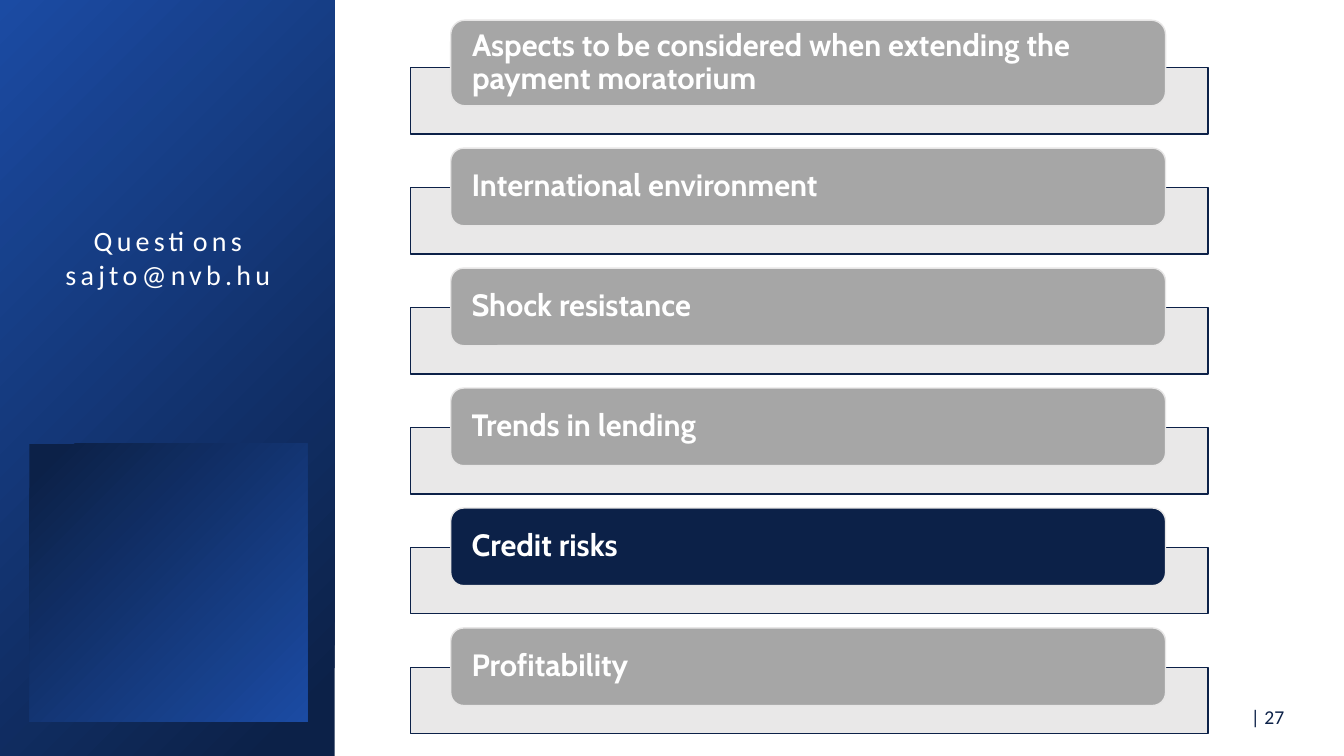
from lxml import etree
from pptx import Presentation
from pptx.dml.color import RGBColor
from pptx.enum.shapes import MSO_SHAPE as SHAPE
from pptx.enum.text import MSO_ANCHOR as ANCHOR, MSO_AUTO_SIZE as AUTO, PP_ALIGN as ALIGN
from pptx.oxml.ns import qn
from pptx.util import Inches, Pt

NAVY = RGBColor(0x0C, 0x21, 0x48)
BLUE = RGBColor(0x1B, 0x4B, 0xA3)
GRAY = RGBColor(0xA6, 0xA6, 0xA6)
LIGHT = RGBColor(0xE7, 0xE6, 0xE6)
WHITE = RGBColor(0xFF, 0xFF, 0xFF)

CONTACT = ["Questions", "sajto@nvb.hu"]
PAGE = "| 27 "
TOPICS = [
    ("Aspects to be considered when extending the payment moratorium", 0.85, GRAY),
    ("International environment", 0.77, GRAY),
    ("Shock resistance", 0.77, GRAY),
    ("Trends in lending", 0.77, GRAY),
    ("Credit risks", 0.77, NAVY),
    ("Profitability", 0.77, GRAY),
]
PANELS = [((-0.01, 0, 3.33, 7.5), 0), ((0.29, 4.4, 2.76, 2.76), 180)]

BAR_LEFT, BAR_TOP, BAR_WIDTH, BAR_HEIGHT = 4.07, 0.67, 7.91, 0.66
PITCH = 1.19
CARD_LEFT, CARD_WIDTH, CARD_DROP = 4.47, 7.09, 0.38

CONTACT_FONT = dict(name="Calibri", size=Pt(20), bold=False)
PAGE_FONT = dict(name="Calibri", size=Pt(14))
CARD_FONT = dict(name="Cabin", size=Pt(22), bold=True)


def set_attrs(target, values):
    for name, value in values.items():
        setattr(target, name, value)


def add_box(s, kind, box):
    sp = s.shapes.add_shape(kind, *map(Inches, box))
    sp.shadow.inherit = False
    return sp


def add_panel(s, box, rotation):
    sp = add_box(s, SHAPE.RECTANGLE, box)
    sp.rotation = rotation
    sp.line.fill.background()
    sp.fill.gradient()
    sp.fill.gradient_angle = 135
    for stop, position, color in zip(sp.fill.gradient_stops, (0.06, 1), (NAVY, BLUE)):
        stop.position = position
        stop.color.rgb = color


def paint(sp, fill, line):
    sp.fill.solid()
    sp.fill.fore_color.rgb = fill
    sp.line.color.rgb = line
    sp.line.width = Pt(1)


def write(p, text, font, color, align):
    p.alignment = align
    r = p.add_run()
    r.text = text
    set_attrs(r.font, font)
    r.font.color.rgb = color
    return r


def add_topic(s, index, text, height, color):
    top = BAR_TOP + index * PITCH
    bar = add_box(s, SHAPE.RECTANGLE, (BAR_LEFT, top, BAR_WIDTH, BAR_HEIGHT))
    paint(bar, LIGHT, NAVY)
    srgb = bar.fill._xPr.find(qn("a:solidFill"))[0]
    etree.SubElement(srgb, qn("a:alpha"), val="90000")

    card_top = top + CARD_DROP - height
    card = add_box(s, SHAPE.ROUNDED_RECTANGLE, (CARD_LEFT, card_top, CARD_WIDTH, height))
    paint(card, color, LIGHT)
    tf = card.text_frame
    set_attrs(tf, dict(word_wrap=True, vertical_anchor=ANCHOR.MIDDLE,
                       margin_left=Inches(0.17), margin_right=Inches(0.17),
                       margin_top=0, margin_bottom=0))
    p = tf.paragraphs[0]
    p.line_spacing = 0.9
    write(p, text, CARD_FONT, WHITE, ALIGN.LEFT)


def add_contact(s):
    title = s.shapes.title
    title.element.getparent().append(title.element)
    set_attrs(title, dict(left=Inches(0.4), top=Inches(2.17),
                          width=Inches(2.53), height=Inches(0.77)))
    tf = title.text_frame
    set_attrs(tf, dict(word_wrap=True, vertical_anchor=ANCHOR.TOP, auto_size=AUTO.NONE))
    for i, text in enumerate(CONTACT):
        p = tf.add_paragraph() if i else tf.paragraphs[0]
        r = write(p, text, CONTACT_FONT, WHITE, ALIGN.CENTER)
        r.font._element.set("spc", "300")


def add_page_number(s):
    box = s.shapes.add_textbox(*map(Inches, (12.19, 6.9, 0.69, 0.41)))
    tf = box.text_frame
    set_attrs(tf, dict(word_wrap=True, vertical_anchor=ANCHOR.MIDDLE))
    write(tf.paragraphs[0], PAGE, PAGE_FONT, NAVY, ALIGN.RIGHT)


def main():
    prs = Presentation()
    prs.slide_width, prs.slide_height = Inches(13.33), Inches(7.5)
    s = prs.slides.add_slide(prs.slide_layouts[5])
    for box, rotation in PANELS:
        add_panel(s, box, rotation)
    add_contact(s)
    add_page_number(s)
    for index, topic in enumerate(TOPICS):
        add_topic(s, index, *topic)
    prs.save("out.pptx")


if __name__ == "__main__":
    main()
